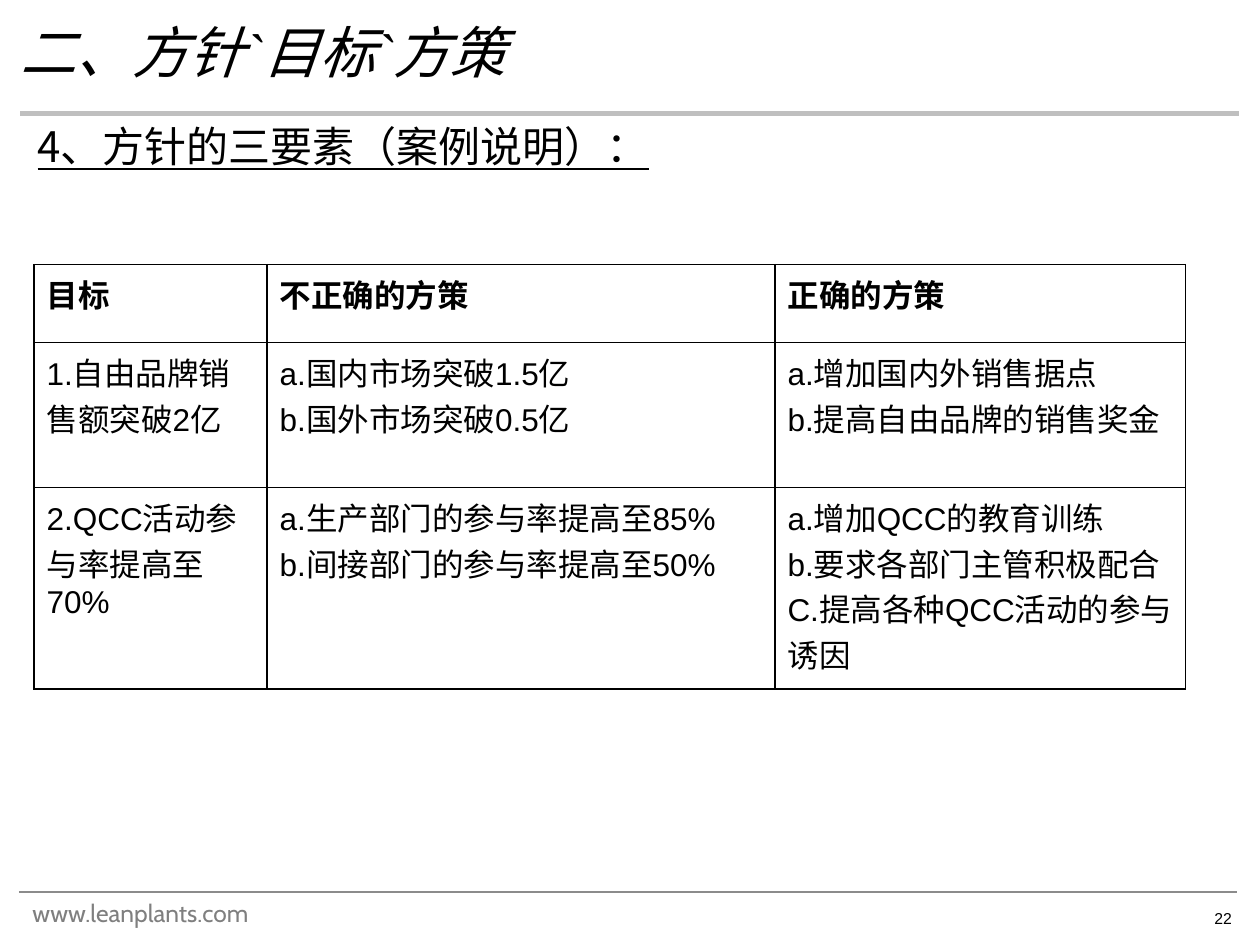
from lxml.etree import SubElement
from pptx import Presentation
from pptx.dml.color import RGBColor
from pptx.enum.shapes import MSO_CONNECTOR as CONN
from pptx.enum.text import MSO_ANCHOR, MSO_AUTO_SIZE, PP_ALIGN
from pptx.oxml.ns import qn
from pptx.util import Inches, Pt

TITLE = "二、方针`目标`方策"
SUBTITLE = "4、方针的三要素（案例说明）："
SITE = "www.leanplants.com"
PAGE = "22"

# One list of paragraphs per cell
ROWS = [
    [["目标"], ["不正确的方策"], ["正确的方策"]],
    [["1.自由品牌销售额突破2亿"],
     ["a.国内市场突破1.5亿", "b.国外市场突破0.5亿"],
     ["a.增加国内外销售据点", "b.提高自由品牌的销售奖金"]],
    [["2.QCC活动参与率提高至70%"],
     ["a.生产部门的参与率提高至85%", "b.间接部门的参与率提高至50%"],
     ["a.增加QCC的教育训练", "b.要求各部门主管积极配合",
      "C.提高各种QCC活动的参与诱因"]],
]
COL_WIDTHS = [1.85, 4.03, 3.26]
ROW_HEIGHTS = [0.62, 1.15, 1.6]

# left, right, y, colour, width in points
RULES = [
    (0.16, 9.83, 0.9, "BFBFBF", 3),
    (0.15, 9.82, 7.08, "8B8B8B", 1),
]

# text, box, wrap, format
LABELS = [
    (SUBTITLE, (0.2, 0.91, 5.08, 0.5), True,
     dict(name="Noto Sans CJK SC", size=Pt(24), underline=True)),
    (SITE, (0.16, 7.08, 2.34, 0.34), True,
     dict(name="Cabin", size=Pt(14), color="7F7F7F")),
    (PAGE, (9.54, 7.16, 0.37, 0.27), False, dict(name="Arial", size=Pt(9))),
]


def rgb(hex_code):
    return RGBColor.from_string(hex_code)


def write(tf, lines, color="000000", **fmt):
    for i, line in enumerate(lines):
        p = tf.paragraphs[0] if i == 0 else tf.add_paragraph()
        p.alignment = PP_ALIGN.LEFT
        r = p.add_run()
        r.text = line
        r.font.color.rgb = rgb(color)
        for key, value in fmt.items():
            setattr(r.font, key, value)


def add_rule(s, left, right, y, color, width):
    line = s.shapes.add_connector(
        CONN.STRAIGHT, Inches(left), Inches(y), Inches(right), Inches(y))
    line.line.color.rgb = rgb(color)
    line.line.width = Pt(width)
    SubElement(line._element.spPr, qn("a:effectLst"))


def add_borders(cell, color="000000", width=1):
    tc_pr = cell._tc.get_or_add_tcPr()
    for side in ("lnL", "lnR", "lnT", "lnB"):
        ln = SubElement(tc_pr, qn(f"a:{side}"), w=str(Pt(width)))
        fill = SubElement(ln, qn("a:solidFill"))
        SubElement(fill, qn("a:srgbClr"), val=color)


def add_policy_table(s, left, top):
    frame = s.shapes.add_table(
        len(ROWS), len(COL_WIDTHS), Inches(left), Inches(top),
        Inches(sum(COL_WIDTHS)), Inches(sum(ROW_HEIGHTS)))
    table = frame.table
    table.horz_banding = False
    for column, width in zip(table.columns, COL_WIDTHS):
        column.width = Inches(width)
    for row, height in zip(table.rows, ROW_HEIGHTS):
        row.height = Inches(height)
    for i, row in enumerate(ROWS):
        for j, lines in enumerate(row):
            cell = table.cell(i, j)
            add_borders(cell)
            cell.fill.background()
            write(cell.text_frame, lines, name="Arial", size=Pt(18), bold=i == 0)


def main():
    prs = Presentation()
    prs.slide_width, prs.slide_height = Inches(10), Inches(7.5)
    s = prs.slides.add_slide(prs.slide_layouts[5])

    for rule in RULES:
        add_rule(s, *rule)

    title = s.shapes.title
    title.left, title.top, title.width, title.height = map(
        Inches, (0.06, 0.09, 6, 0.63))
    title.text_frame.auto_size = MSO_AUTO_SIZE.NONE
    title.text_frame.vertical_anchor = MSO_ANCHOR.MIDDLE
    write(title.text_frame, [TITLE], name="Times New Roman", size=Pt(32), italic=True)

    for text, box, wrap, fmt in LABELS:
        tf = s.shapes.add_textbox(*map(Inches, box)).text_frame
        tf.word_wrap = wrap
        write(tf, [text], **fmt)

    add_policy_table(s, 0.27, 2.1)
    prs.save("out.pptx")


if __name__ == "__main__":
    main()
